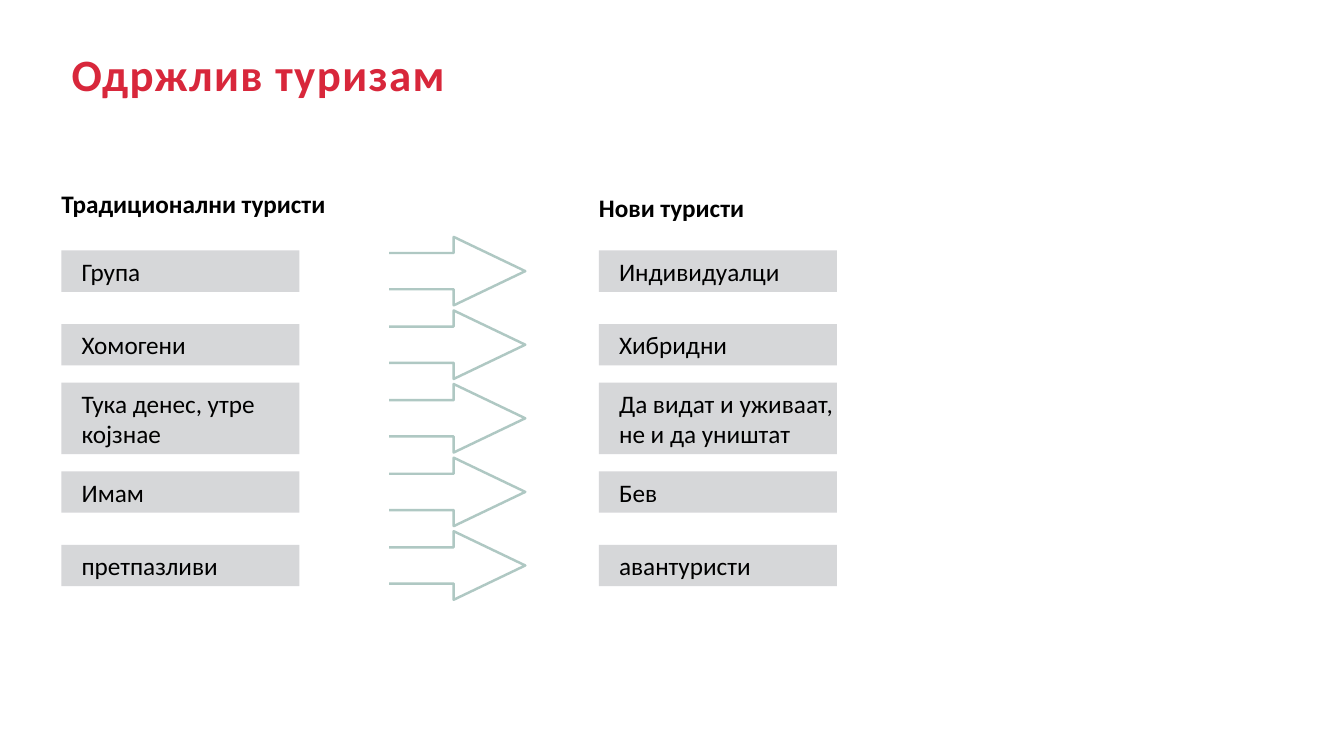
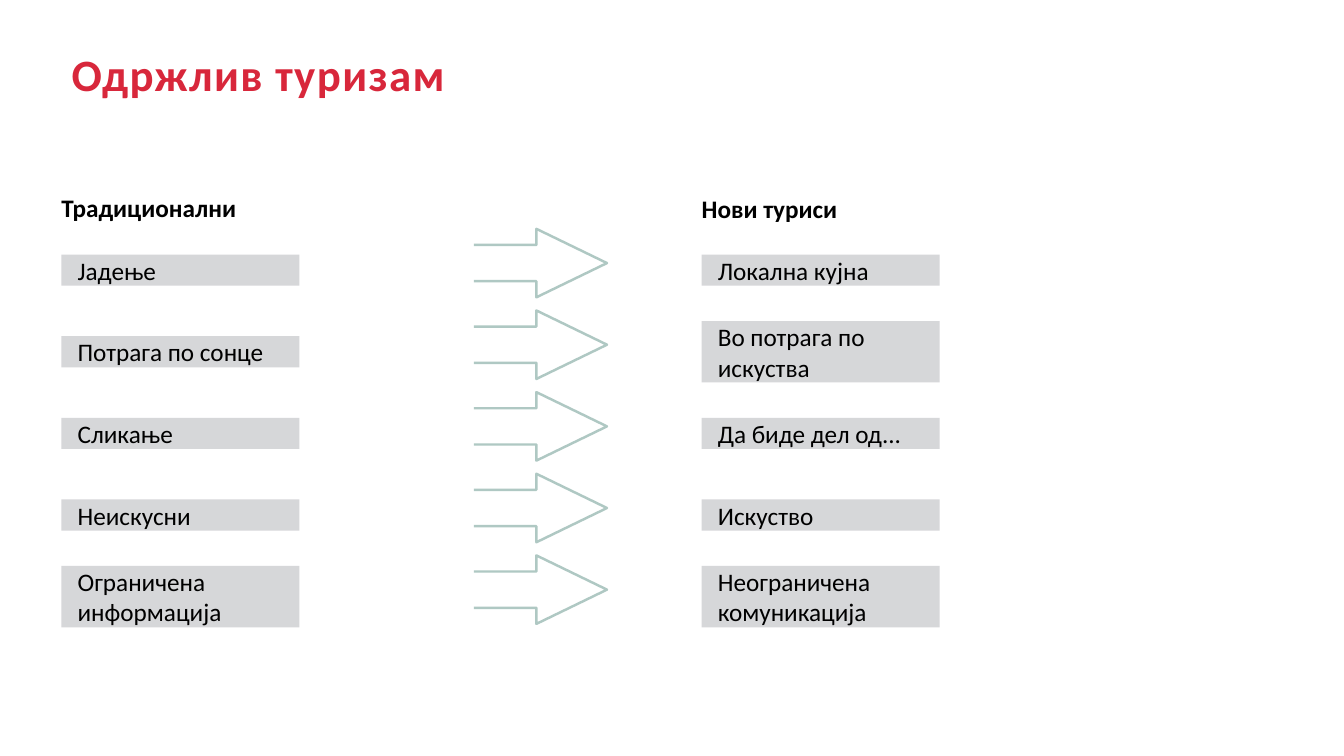
from dataclasses import dataclass

from pptx import Presentation
from pptx.dml.color import RGBColor
from pptx.enum.shapes import MSO_SHAPE
from pptx.enum.text import MSO_ANCHOR as Anchor, MSO_AUTO_SIZE as AutoSize, PP_ALIGN as Align
from pptx.slide import Slide
from pptx.text.text import TextFrame
from pptx.util import Inches, Pt

RED = RGBColor(0xD8, 0x27, 0x3B)
BLACK = RGBColor(0x00, 0x00, 0x00)
GREY = RGBColor(0xD6, 0xD7, 0xD9)
SAGE = RGBColor(0xAF, 0xC8, 0xC3)
FONT = "Calibri"
TITLE = "Одржлив туризам"
TITLE_ONLY = 5

BOX_W = 2.36
LINE_H = 0.3
HEADING_W = 2.76
HEAD_HALF = 0.34
SHAFT_HALF = 0.18


@dataclass
class Column:
    heading: str
    left: float
    heading_top: float
    items: list[str]
    two_line_rows: tuple[int, ...]


@dataclass
class Arrows:
    tail: float
    neck: float
    tip: float
    shift: float


@dataclass
class Comparison:
    columns: list[Column]
    arrows: Arrows
    first_center: float
    pitch: float
    inset_left: float
    inset_y: float

    def center(self, row: int) -> float:
        return self.first_center + row * self.pitch


COMPARISONS = [
    Comparison(
        columns=[
            Column("Традиционални туристи", 0.61, 1.87,
                   ["Група", "Хомогени", "Тука денес, утре којзнае", "Имам", "претпазливи"], (2,)),
            Column("Нови туристи", 5.94, 1.91,
                   ["Индивидуалци", "Хибридни", "Да видат и уживаат, не и да уништат",
                    "Бев", "авантуристи"], (2,)),
        ],
        arrows=Arrows(tail=3.86, neck=4.5, tip=5.21, shift=0),
        first_center=2.69, pitch=0.73, inset_left=0.08, inset_y=0.05,
    ),
    Comparison(
        columns=[
            Column("Традиционални", 0.61, 1.91,
                   ["Јадење", "Потрага по сонце", "Сликање", "Неискусни",
                    "Ограничена информација"], (4,)),
            Column("Нови туриси", 6.96, 1.92,
                   ["Локална кујна", "Во потрага по искуства", "Да биде дел од...",
                    "Искуство", "Неограничена комуникација"], (1, 4)),
        ],
        arrows=Arrows(tail=4.7, neck=5.32, tip=6.02, shift=-0.07),
        first_center=2.68, pitch=0.81, inset_left=0.04, inset_y=0,
    ),
]


def write(tf: TextFrame, text: str, size: int = 18, color: RGBColor = BLACK,
          bold: bool = False, space: int = 6) -> None:
    tf.text = text
    tf.word_wrap = True
    tf.auto_size = AutoSize.SHAPE_TO_FIT_TEXT
    p = tf.paragraphs[0]
    p.alignment = Align.LEFT
    p.space_before = p.space_after = Pt(space)
    font = p.runs[0].font
    font.name, font.size, font.bold = FONT, Pt(size), bold
    font.color.rgb = color


def set_insets(tf: TextFrame, left: float = 0, y: float = 0) -> None:
    tf.margin_left, tf.margin_right = Inches(left), 0
    tf.margin_top = tf.margin_bottom = Inches(y)


def add_title(s: Slide) -> None:
    sp = s.shapes.title
    sp.left, sp.top, sp.width, sp.height = (Inches(v) for v in (0.61, 0.41, 8.23, 0.64))
    tf = sp.text_frame
    write(tf, TITLE, 32, RED, bold=True, space=0)
    tf.vertical_anchor = Anchor.TOP
    tf.paragraphs[0].runs[0].font._element.set("spc", "100")


def add_heading(s: Slide, column: Column) -> None:
    sp = s.shapes.add_textbox(Inches(column.left), Inches(column.heading_top),
                              Inches(HEADING_W), Inches(LINE_H))
    write(sp.text_frame, column.heading, bold=True)
    set_insets(sp.text_frame)


def add_box(s: Slide, comparison: Comparison, column: Column, row: int) -> None:
    lines = 2 if row in column.two_line_rows else 1
    height = lines * LINE_H + 2 * comparison.inset_y + 0.01
    sp = s.shapes.add_shape(MSO_SHAPE.RECTANGLE, Inches(column.left),
                            Inches(comparison.center(row) - height / 2),
                            Inches(BOX_W), Inches(height))
    sp.shadow.inherit = False
    sp.fill.solid()
    sp.fill.fore_color.rgb = GREY
    sp.line.fill.background()
    tf = sp.text_frame
    write(tf, column.items[row])
    set_insets(tf, comparison.inset_left, comparison.inset_y)
    tf.vertical_anchor = Anchor.MIDDLE
    pPr = tf.paragraphs[0]._p.get_or_add_pPr()
    pPr.set("marL", str(Inches(0.12)))
    pPr.set("indent", "0")


def add_arrow(s: Slide, arrows: Arrows, center: float) -> None:
    outline = [
        (arrows.tail, -SHAFT_HALF), (arrows.neck, -SHAFT_HALF), (arrows.neck, -HEAD_HALF),
        (arrows.tip, 0),
        (arrows.neck, HEAD_HALF), (arrows.neck, SHAFT_HALF), (arrows.tail, SHAFT_HALF),
    ]
    points = [(Inches(x), Inches(center + dy)) for x, dy in outline]
    builder = s.shapes.build_freeform(*points[0])
    builder.add_line_segments(points[1:], close=False)
    sp = builder.convert_to_shape()
    sp.shadow.inherit = False
    sp.fill.background()
    sp.line.color.rgb = SAGE
    sp.line.width = Pt(1.75)


def add_comparison(s: Slide, comparison: Comparison) -> None:
    add_title(s)
    for column in comparison.columns:
        add_heading(s, column)
        for row in range(len(column.items)):
            add_box(s, comparison, column, row)
    for row in range(len(comparison.columns[0].items)):
        add_arrow(s, comparison.arrows, comparison.center(row) + comparison.arrows.shift)


def main() -> None:
    prs = Presentation()
    prs.slide_width, prs.slide_height = Inches(13.33), Inches(7.5)
    for comparison in COMPARISONS:
        add_comparison(prs.slides.add_slide(prs.slide_layouts[TITLE_ONLY]), comparison)
    prs.save("out.pptx")


if __name__ == "__main__":
    main()
